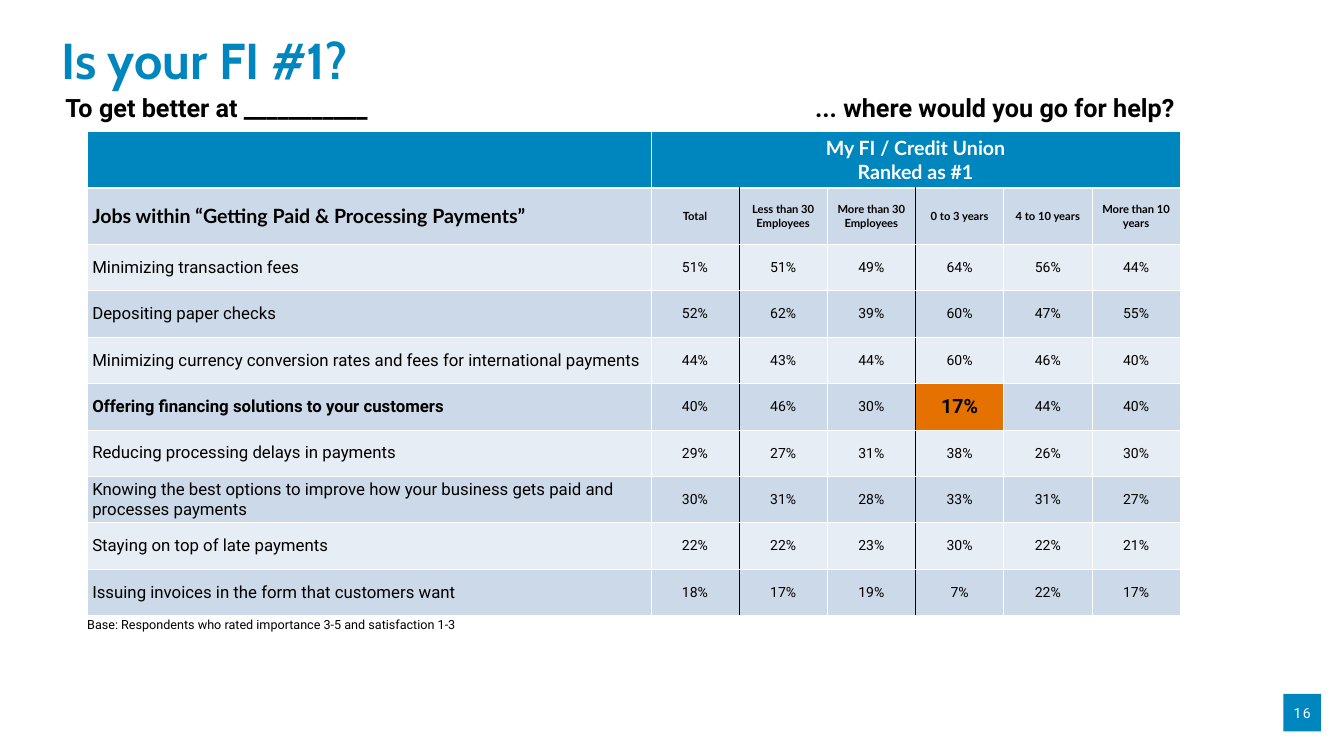
from dataclasses import dataclass

from lxml import etree
from pptx import Presentation
from pptx import util as u
from pptx.dml.color import RGBColor
from pptx.enum import shapes, text
from pptx.oxml import ns


@dataclass(frozen=True)
class Theme:
    blue: str = "0086BF"
    orange: str = "E57100"
    white: str = "FFFFFF"
    black: str = "000000"
    pale: str = "E7EDF4"
    mid: str = "CCD9E8"
    title: int = 72
    lead: int = 36
    head: int = 28
    job: int = 24
    value: int = 20
    note: int = 18
    label: int = 16


T = Theme()
LEFT, CENTER = text.PP_ALIGN.LEFT, text.PP_ALIGN.CENTER
GROUPS = ["Total", "Less than 30 Employees", "More than 30 Employees",
          "0 to 3 years", "4 to 10 years", "More than 10 years"]
JOBS = [
    ("Minimizing transaction fees", [51, 51, 49, 64, 56, 44]),
    ("Depositing paper checks", [52, 62, 39, 60, 47, 55]),
    ("Minimizing currency conversion rates and fees for international payments",
     [44, 43, 44, 60, 46, 40]),
    ("Offering financing solutions to your customers", [40, 46, 30, 17, 44, 40]),
    ("Reducing processing delays in payments", [29, 27, 31, 38, 26, 30]),
    ("Knowing the best options to improve how your business gets paid and "
     "processes payments", [30, 31, 28, 33, 31, 27]),
    ("Staying on top of late payments", [22, 22, 23, 30, 22, 21]),
    ("Issuing invoices in the form that customers want", [18, 17, 19, 7, 22, 17]),
]
KEY_JOB, KEY_GROUP = 3, 3
RULES = (1, 3)  # columns with a black rule on their right


def write(frame, words, size, font="Roboto", color=T.black, bold=False,
          align=LEFT, lines=None, track=0, tab=None):
    """Fill a text frame, one paragraph for each line of words."""
    for i, line in enumerate(words.split("\n")):
        para = frame.paragraphs[0] if i == 0 else frame.add_paragraph()
        para.alignment = align
        if lines:
            para.line_spacing = lines
        if tab:
            stops = etree.SubElement(para._p.get_or_add_pPr(), ns.qn("a:tabLst"))
            etree.SubElement(stops, ns.qn("a:tab"), pos=str(u.Inches(tab)), algn="r")
        run = para.add_run()
        run.text = line
        run.font.size = u.Pt(size)
        run.font.name = font
        run.font.bold = bold
        run.font.color.rgb = RGBColor.from_string(color)
        if track:
            run.font._element.set("spc", str(track * 100))


def inset(part, left, top, right, bottom):
    """Set the margins of a cell or a text frame."""
    part.margin_left, part.margin_top = u.Inches(left), u.Inches(top)
    part.margin_right, part.margin_bottom = u.Inches(right), u.Inches(bottom)


def add_text(slide, box, words, size, pad=(0, 0, 0, 0), wrap=True,
             anchor=text.MSO_ANCHOR.TOP, **style):
    frame = slide.shapes.add_textbox(*map(u.Inches, box)).text_frame
    frame.word_wrap = wrap
    frame.vertical_anchor = anchor
    inset(frame, *pad)
    write(frame, words, size, **style)


def add_edge(cell, side, color, width):
    line = etree.SubElement(cell._tc.get_or_add_tcPr(), ns.qn("a:ln" + side),
                            w=str(u.Pt(width)))
    fill = etree.SubElement(line, ns.qn("a:solidFill"))
    etree.SubElement(fill, ns.qn("a:srgbClr"), val=color)


def paint(cell, row, col):
    """Give a cell its borders and fill."""
    dark = {"L": row > 0 and col - 1 in RULES, "R": row > 0 and col in RULES}
    for side in "LRTB":
        add_edge(cell, side, T.black if dark.get(side) else T.white,
                 3 if row == 0 and side == "B" else 1)
    if row == 0:
        color = T.blue
    elif (row - 2, col - 1) == (KEY_JOB, KEY_GROUP):
        color = T.orange
    else:
        color = T.mid if row == 1 or row % 2 else T.pale
    cell.fill.solid()
    cell.fill.fore_color.rgb = RGBColor.from_string(color)
    cell.vertical_anchor = text.MSO_ANCHOR.MIDDLE


def add_grid(slide):
    rows, cols = len(JOBS) + 2, len(GROUPS) + 1
    box = map(u.Inches, (1.73, 2.61, 21.68, 9.6))
    grid = slide.shapes.add_table(rows, cols, *box).table
    grid.first_row = grid.horz_banding = False
    for i, col in enumerate(grid.columns):
        col.width = u.Inches(1.75 if i else 11.18)
    for i, row in enumerate(grid.rows):
        row.height = u.Inches(1.12 if i < 2 else 0.92)
    for r in range(rows):
        for c in range(cols):
            paint(grid.cell(r, c), r, c)

    # Two heading rows
    top = grid.cell(0, 1)
    top.merge(grid.cell(0, cols - 1))
    write(top.text_frame, "My FI / Credit Union\nRanked as #1", T.head,
          font="Lato", color=T.white, bold=True, align=CENTER)
    write(grid.cell(1, 0).text_frame, "Jobs within “Getting Paid & Processing Payments”",
          T.head, font="Lato", bold=True)
    for c, name in enumerate(GROUPS, 1):
        cell = grid.cell(1, c)
        inset(cell, 0, 0, 0, 0)
        write(cell.text_frame, name, T.label, font="Lato", bold=True, align=CENTER)

    # One row for each job
    for j, (job, shares) in enumerate(JOBS):
        cell = grid.cell(j + 2, 0)
        inset(cell, 0.1, 0.01, 0.01, 0)
        write(cell.text_frame, job, T.job, bold=j == KEY_JOB)
        for g, share in enumerate(shares):
            key = (j, g) == (KEY_JOB, KEY_GROUP)
            cell = grid.cell(j + 2, g + 1)
            inset(cell, 0.01, 0.01, 0.01, 0)
            write(cell.text_frame, f"{share}%", T.head if key else T.value,
                  bold=key, align=CENTER)


def add_badge(slide):
    box = map(u.Inches, (25.46, 13.77, 0.74, 0.74))
    badge = slide.shapes.add_shape(shapes.MSO_SHAPE.RECTANGLE, *box)
    badge.shadow.inherit = False
    badge.fill.solid()
    badge.fill.fore_color.rgb = RGBColor.from_string(T.blue)
    badge.line.fill.background()
    add_text(slide, (25.57, 13.92, 0.52, 0.44), "16", T.value, pad=[0.05] * 4,
             wrap=False, anchor=text.MSO_ANCHOR.MIDDLE, color=T.white,
             align=CENTER, track=2)


def main():
    deck = Presentation()
    deck.slide_width, deck.slide_height = u.Inches(26.66), u.Inches(15)
    slide = deck.slides.add_slide(deck.slide_layouts[6])

    # Page number
    add_badge(slide)

    # Title, table and note
    add_text(slide, (1.22, 0.85, 24.24, 1.98), "Is your FI #1?", T.title,
             font="Cabin", color=T.blue, bold=True, lines=0.75)
    add_grid(slide)
    add_text(slide, (1.73, 12.15, 10.96, 0.35),
             "Base: Respondents who rated importance 3-5 and satisfaction 1-3",
             T.note, lines=1.3)

    # Question across the table, its end held by a right tab
    add_text(slide, (1.2, 1.78, 22.22, 0.71),
             "To get better at ___________\t... where would you go for help?",
             T.lead, pad=(0.1, 0.05, 0.1, 0.05), bold=True, tab=22)

    deck.save("out.pptx")


if __name__ == "__main__":
    main()
